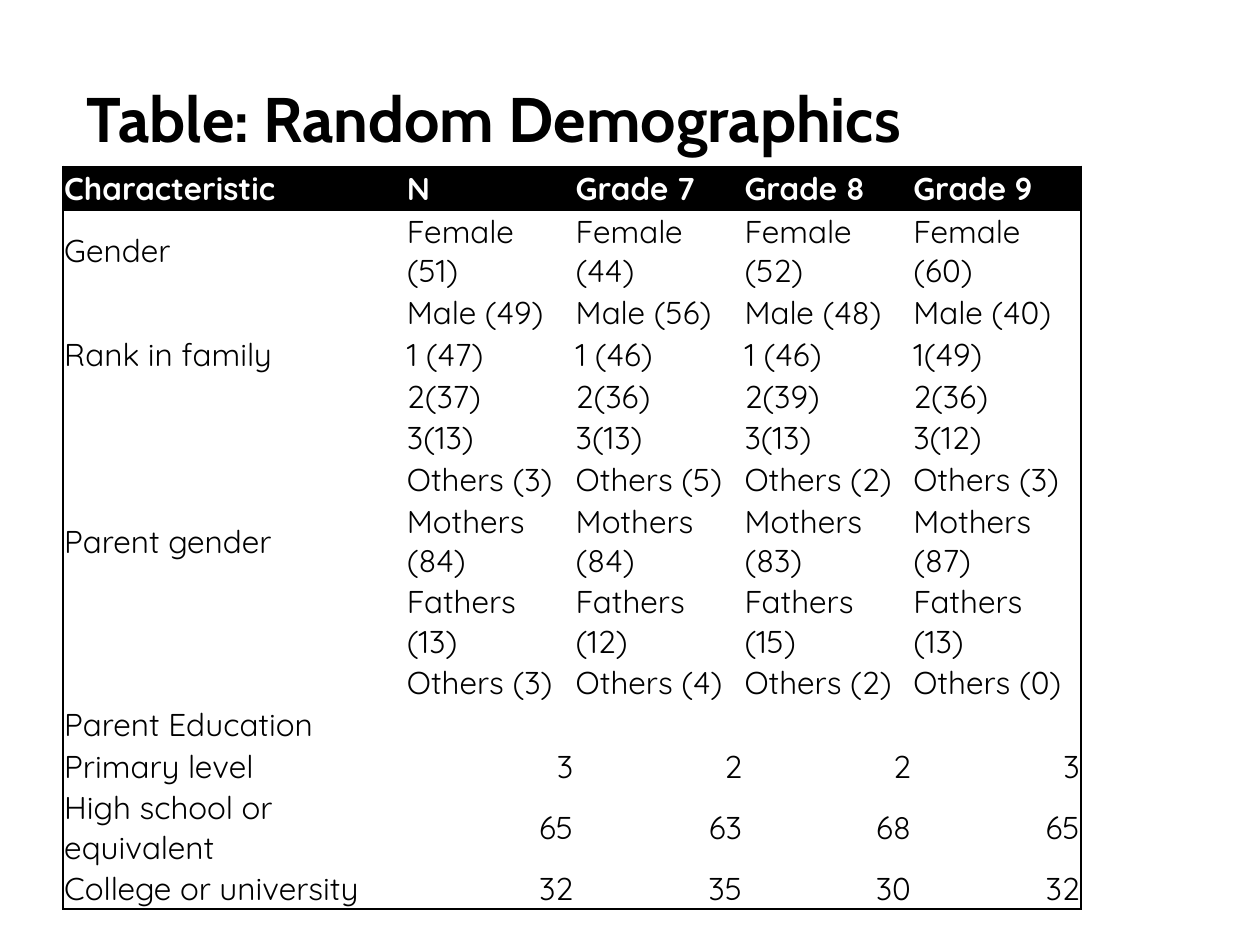
from dataclasses import dataclass

from lxml.etree import SubElement
from pptx import Presentation
from pptx.dml.color import RGBColor
from pptx.enum.text import MSO_ANCHOR as Anchor, MSO_AUTO_SIZE as AutoSize, PP_ALIGN as Align
from pptx.oxml.ns import qn
from pptx.util import Inches, Pt

TITLE = "Table: Random Demographics"
HEADER = ["Characteristic", "N", "Grade 7", "Grade 8", "Grade 9"]
BODY = [
    ["Gender", "Female (51)", "Female (44)", "Female (52)", "Female (60)"],
    ["", "Male (49)", "Male (56)", "Male (48)", "Male (40)"],
    ["Rank in family", "1 (47)", "1 (46)", "1 (46)", "1(49)"],
    ["", "2(37)", "2(36)", "2(39)", "2(36)"],
    ["", "3(13)", "3(13)", "3(13)", "3(12)"],
    ["", "Others (3)", "Others (5)", "Others (2)", "Others (3)"],
    ["Parent gender", "Mothers (84)", "Mothers (84)", "Mothers (83)", "Mothers (87)"],
    ["", "Fathers (13)", "Fathers (12)", "Fathers (15)", "Fathers (13)"],
    ["", "Others (3)", "Others (4)", "Others (2)", "Others (0)"],
    ["Parent Education", "", "", "", ""],
    ["Primary level", "3", "2", "2", "3"],
    ["High school or equivalent", "65", "63", "68", "65"],
    ["College or university", "32", "35", "30", "32"],
]
COLUMN_WIDTHS = [2.72] + [1.34] * 4
HEADER_HEIGHT, ROW_HEIGHT = 0.35, 1 / 3


@dataclass(frozen=True)
class Theme:
    ink: str = "000000"
    paper: str = "FFFFFF"
    title_font: str = "Cabin"
    body_font: str = "Quicksand"
    title_size: int = 36
    body_size: int = 18
    border: int = 1


THEME = Theme()


def add_text(para, text, font_name, size, color, bold):
    span = para.add_run()
    span.text = text
    span.font.name = font_name
    span.font.size = Pt(size)
    span.font.bold = bold
    span.font.color.rgb = RGBColor.from_string(color)


def add_borders(cell, edges):
    properties = cell._tc.get_or_add_tcPr()
    for side, visible in edges.items():
        line = SubElement(properties, qn(f"a:ln{side}"), w=str(Pt(THEME.border)))
        if visible:
            fill = SubElement(line, qn("a:solidFill"))
            SubElement(fill, qn("a:srgbClr"), val=THEME.ink)
        else:
            SubElement(line, qn("a:noFill"))


def format_cell(cell, text, is_header, edges):
    add_borders(cell, edges)
    cell.fill.solid()
    cell.fill.fore_color.rgb = RGBColor.from_string(THEME.ink if is_header else THEME.paper)
    cell.margin_left = cell.margin_right = cell.margin_top = Inches(0.01)
    cell.margin_bottom = 0
    cell.vertical_anchor = Anchor.MIDDLE
    para = cell.text_frame.paragraphs[0]
    para.alignment = Align.RIGHT if text.isdigit() else Align.LEFT
    if text:
        color = THEME.paper if is_header else THEME.ink
        add_text(para, text, THEME.body_font, THEME.body_size, color, is_header)


def add_title(page):
    box = page.shapes.title
    box.left, box.top, box.width, box.height = map(Inches, (0.59, 0.55, 7.89, 0.73))
    frame = box.text_frame
    frame.auto_size = AutoSize.NONE
    frame.vertical_anchor = Anchor.BOTTOM
    para = frame.paragraphs[0]
    para.alignment = Align.LEFT
    add_text(para, TITLE, THEME.title_font, THEME.title_size, THEME.ink, True)


def add_demographics(page):
    rows = [HEADER] + BODY
    heights = [HEADER_HEIGHT] + [ROW_HEIGHT] * len(BODY)
    table = page.shapes.add_table(
        len(rows), len(HEADER), Inches(0.5), Inches(1.32),
        Inches(sum(COLUMN_WIDTHS)), Inches(sum(heights)),
    ).table
    table.horz_banding = False
    for column, width in zip(table.columns, COLUMN_WIDTHS):
        column.width = Inches(width)
    for row, height in zip(table.rows, heights):
        row.height = Inches(height)
    for r, texts in enumerate(rows):
        for c, text in enumerate(texts):
            edges = {
                "L": c == 0,
                "R": c == len(HEADER) - 1,
                "T": r <= 1,
                "B": r in (0, len(rows) - 1),
            }
            format_cell(table.cell(r, c), text, r == 0, edges)


def main():
    deck = Presentation()
    deck.slide_width, deck.slide_height = Inches(10), Inches(7.5)
    page = deck.slides.add_slide(deck.slide_layouts[5])
    add_title(page)
    add_demographics(page)
    deck.save("out.pptx")


if __name__ == "__main__":
    main()
